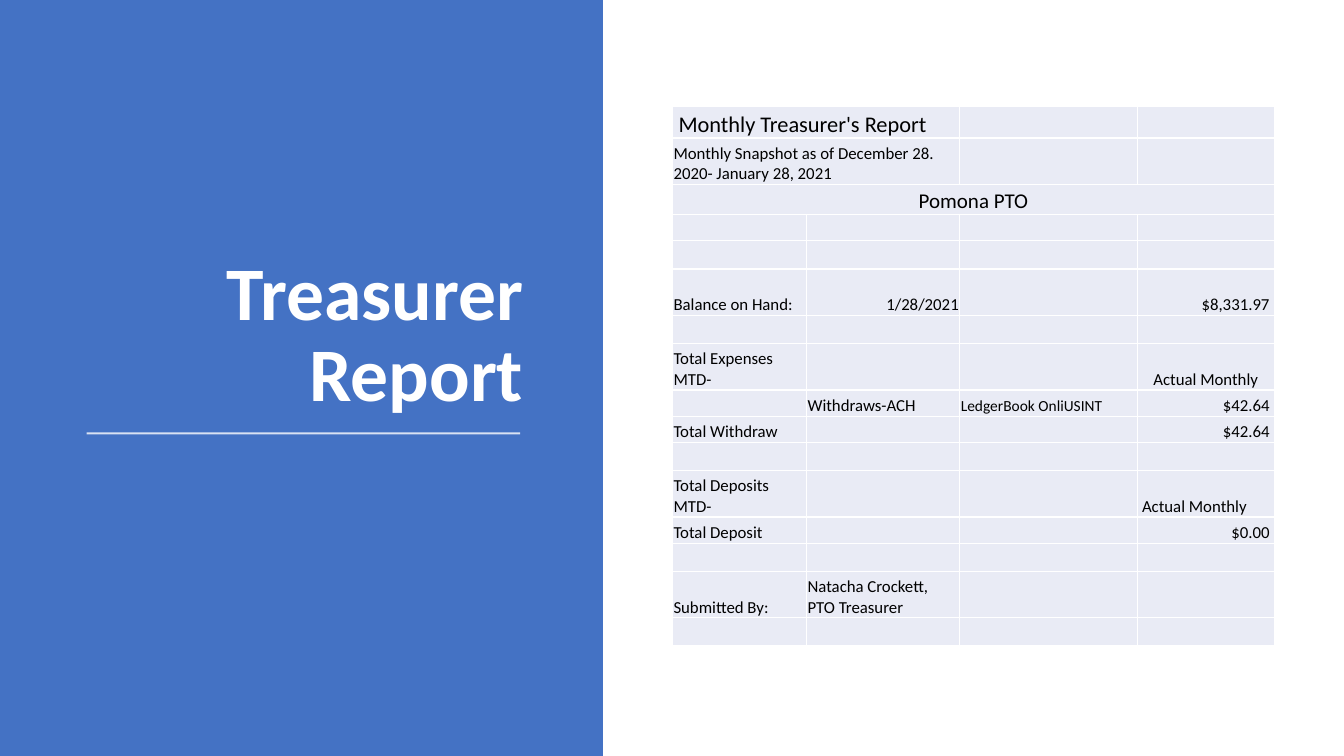
from lxml.etree import SubElement
from pptx import Presentation
from pptx.dml.color import RGBColor
from pptx.enum.shapes import MSO_CONNECTOR, MSO_SHAPE
from pptx.enum.text import MSO_ANCHOR, MSO_AUTO_SIZE, PP_ALIGN
from pptx.oxml.ns import qn
from pptx.util import Pt

PX = 9144  # 100 px to the inch
BLUE = RGBColor(0x44, 0x72, 0xC4)
WHITE = RGBColor(0xFF, 0xFF, 0xFF)
BLACK = RGBColor(0x00, 0x00, 0x00)
PALE = RGBColor(0xE9, 0xEB, 0xF5)
FONT = "Calibri"
LEFT, CENTER, RIGHT = PP_ALIGN.LEFT, PP_ALIGN.CENTER, PP_ALIGN.RIGHT


def px(*values):
    return [v * PX for v in values]


def add_border(tcPr, side):
    ln = SubElement(tcPr, qn(f"a:{side}"), w=str(Pt(1)))
    fill = SubElement(ln, qn("a:solidFill"))
    SubElement(fill, qn("a:srgbClr"), val=str(WHITE))


prs = Presentation()
prs.slide_width, prs.slide_height = px(1333, 750)
s = prs.slides.add_slide(prs.slide_layouts[5])

# Blue panel, behind the title
panel = s.shapes.add_shape(MSO_SHAPE.RECTANGLE, *px(0, 0, 598, 750))
panel.shadow.inherit = False
panel.fill.solid()
panel.fill.fore_color.rgb = BLUE
panel.line.fill.background()
s.shapes._spTree.insert(2, panel._element)

# Title
title = s.shapes.title
title.left, title.top, title.width, title.height = px(69, 88, 460, 332)
tf = title.text_frame
tf.text = "Treasurer Report"
tf.word_wrap = True
tf.auto_size = MSO_AUTO_SIZE.NONE
tf.vertical_anchor = MSO_ANCHOR.BOTTOM
p = tf.paragraphs[0]
p.alignment = RIGHT
p.line_spacing = 0.9
font = p.runs[0].font
font.name, font.size, font.bold = FONT, Pt(54), True
font.color.rgb = WHITE

# Rule under the title
rule = s.shapes.add_connector(MSO_CONNECTOR.STRAIGHT, *px(86, 430, 516, 430))
rule.line.color.rgb = WHITE
rule.line.width = Pt(1.5)
color = rule._element.spPr.find(f".//{qn('a:srgbClr')}")
SubElement(color, qn("a:alpha"), val="80000")
SubElement(rule._element.spPr, qn("a:effectLst"))

# Report table: (row, column) -> text, alignment, size
COLS = [133, 152, 176, 136]
ROWS = [31, 46, 30, 26, 28, 46, 28, 46, 26, 26, 28, 46, 26, 28, 46, 28]
ENTRIES = {
    (0, 0): (" Monthly Treasurer's Report", LEFT, 16),
    (1, 0): ("Monthly Snapshot as of December 28. 2020- January 28, 2021", LEFT, 12),
    (2, 0): ("Pomona PTO", CENTER, 15),
    (5, 0): ("Balance on Hand:", LEFT, 12),
    (5, 1): ("1/28/2021", RIGHT, 12),
    (5, 3): ("$8,331.97 ", RIGHT, 12),
    (7, 0): ("Total Expenses MTD-", LEFT, 12),
    (7, 3): ("Actual Monthly", CENTER, 12),
    (8, 1): ("Withdraws-ACH", LEFT, 12),
    (8, 2): ("LedgerBook OnliUSINT", LEFT, 11),
    (8, 3): ("$42.64 ", RIGHT, 12),
    (9, 0): ("Total Withdraw", LEFT, 12),
    (9, 3): ("$42.64 ", RIGHT, 12),
    (11, 0): ("Total Deposits MTD-", LEFT, 12),
    (11, 3): (" Actual Monthly", LEFT, 12),
    (12, 0): ("Total Deposit", LEFT, 12),
    (12, 3): ("$0.00 ", RIGHT, 12),
    (14, 0): ("Submitted By:", LEFT, 12),
    (14, 1): ("Natacha Crockett, PTO Treasurer", LEFT, 12),
}
frame = s.shapes.add_table(len(ROWS), len(COLS), *px(667, 106, sum(COLS), sum(ROWS)))
table = frame.table
table.first_row = table.horz_banding = False
for column, width in zip(table.columns, COLS):
    column.width = width * PX
for row, height in zip(table.rows, ROWS):
    row.height = height * PX

for r in range(len(ROWS)):
    for c in range(len(COLS)):
        cell = table.cell(r, c)
        cell.margin_left, cell.margin_top, cell.margin_right, cell.margin_bottom = px(1, 1, 1, 0)
        cell.vertical_anchor = MSO_ANCHOR.BOTTOM
        for side in ("lnL", "lnR", "lnT", "lnB"):
            add_border(cell._tc.tcPr, side)
        cell.fill.solid()
        cell.fill.fore_color.rgb = PALE
        p = cell.text_frame.paragraphs[0]
        if (r, c) in ENTRIES:
            p.text, p.alignment, size = ENTRIES[r, c]
            font = p.runs[0].font
            font.name, font.size = FONT, Pt(size)
            font.color.rgb = BLACK
        else:  # keep empty rows from growing
            SubElement(p._p, qn("a:endParaRPr"), sz="1200")

# Heading rows span several columns
for r, last in ((0, 1), (1, 1), (2, 3)):
    table.cell(r, 0).merge(table.cell(r, last))

prs.save("out.pptx")
